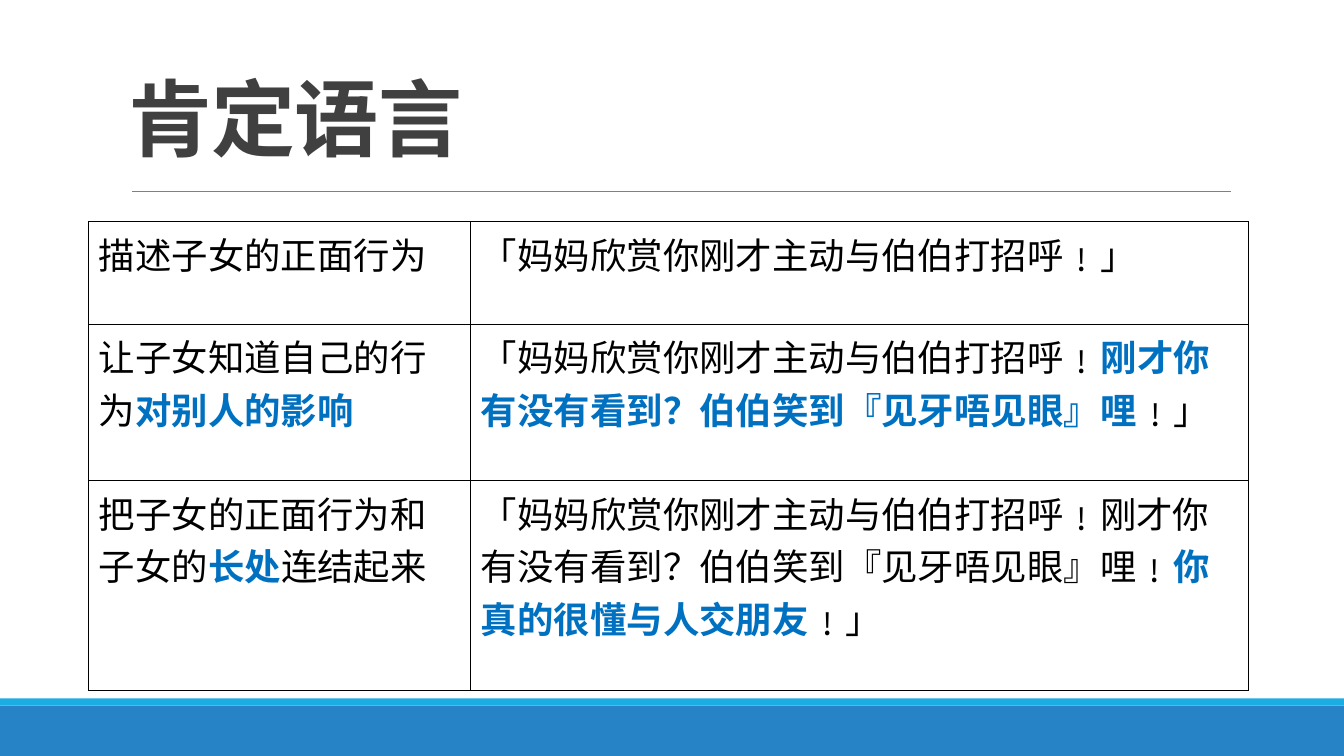
from lxml.etree import SubElement
from pptx import Presentation
from pptx.dml.color import RGBColor
from pptx.enum.shapes import MSO_CONNECTOR, MSO_SHAPE
from pptx.enum.text import MSO_ANCHOR, MSO_AUTO_SIZE, PP_ALIGN
from pptx.oxml.ns import qn
from pptx.util import Inches, Pt

COLORS = {
    "band": "2683C6",
    "stripe": "1CADE4",
    "rule": "808080",
    "title": "404040",
    "text": "000000",
    "emphasis": "0070C0",
    "border": "000000",
}
CJK_FONT = "Noto Sans CJK SC"
GREETING = "「妈妈欣赏你刚才主动与伯伯打招呼﹗"
REACTION = "刚才你有没有看到？伯伯笑到『见牙唔见眼』哩"
CLOSING = "﹗」"

# Each cell holds (words, emphasised) runs.
PRAISE_STEPS = [
    ([("描述子女的正面行为", False)],
     [(GREETING + "」", False)]),
    ([("让子女知道自己的行为", False), ("对别人的影响", True)],
     [(GREETING, False), (REACTION, True), (CLOSING, False)]),
    ([("把子女的正面行为和子女的", False), ("长处", True), ("连结起来", False)],
     [(GREETING + REACTION + "﹗", False), ("你真的很懂与人交朋友", True),
      (CLOSING, False)]),
]
COLUMN_WIDTHS = [3.79, 7.71]
ROW_HEIGHTS = [1.02, 1.55, 2.08]


def color(name):
    return RGBColor.from_string(COLORS[name])


def set_east_asian_font(run):
    SubElement(run.font._element, qn("a:ea"), typeface=CJK_FONT)


def add_bar(slide, left, top, width, height, fill):
    bar = slide.shapes.add_shape(
        MSO_SHAPE.RECTANGLE, Inches(left), Inches(top), Inches(width), Inches(height))
    bar.shadow.inherit = False
    bar.fill.solid()
    bar.fill.fore_color.rgb = color(fill)
    bar.line.fill.background()


def add_footer(slide, left, top, width, height):
    stripe_height = 0.07
    add_bar(slide, left, top + stripe_height, width, height - stripe_height, "band")
    add_bar(slide, left, top, width, stripe_height, "stripe")


def add_heading(slide, left, top, width, height):
    title = slide.shapes.title
    title.left, title.top = Inches(left), Inches(top)
    title.width, title.height = Inches(width), Inches(height)
    frame = title.text_frame
    frame.text = "肯定语言"
    frame.auto_size = MSO_AUTO_SIZE.NONE
    frame.vertical_anchor = MSO_ANCHOR.BOTTOM
    heading = frame.paragraphs[0]
    heading.alignment = PP_ALIGN.LEFT
    heading.line_spacing = 0.85
    heading.font.size = Pt(60)
    heading.font.bold = True
    heading.font.name = CJK_FONT
    heading.font.color.rgb = color("title")
    run = heading.runs[0]
    set_east_asian_font(run)
    run.font._element.set("spc", "-50")

    rule_left, rule_top = left + 0.14, top + height + 0.19
    rule = slide.shapes.add_connector(
        MSO_CONNECTOR.STRAIGHT, Inches(rule_left), Inches(rule_top),
        Inches(rule_left + 10.9), Inches(rule_top))
    rule.line.color.rgb = color("rule")
    rule.line.width = Pt(0.5)
    SubElement(rule._element.spPr, qn("a:effectLst"))


def add_borders(cell):
    properties = cell._tc.get_or_add_tcPr()
    for side in ("lnL", "lnR", "lnT", "lnB"):
        border = SubElement(properties, qn(f"a:{side}"), w=str(Pt(1)))
        fill = SubElement(border, qn("a:solidFill"))
        SubElement(fill, qn("a:srgbClr"), val=COLORS["border"])


def fill_cell(cell, phrases):
    add_borders(cell)
    cell.fill.background()
    paragraph = cell.text_frame.paragraphs[0]
    paragraph.font.size = Pt(26)
    paragraph.font.name = "Arial"
    for words, emphasised in phrases:
        run = paragraph.add_run()
        run.text = words
        run.font.bold = emphasised
        run.font.color.rgb = color("emphasis" if emphasised else "text")
        set_east_asian_font(run)


def add_praise_table(slide, left, top):
    table = slide.shapes.add_table(
        len(ROW_HEIGHTS), len(COLUMN_WIDTHS), Inches(left), Inches(top),
        Inches(sum(COLUMN_WIDTHS)), Inches(sum(ROW_HEIGHTS))).table
    table.first_row = False
    table.horz_banding = False
    for column, width in zip(table.columns, COLUMN_WIDTHS):
        column.width = Inches(width)
    for row, height, step in zip(table.rows, ROW_HEIGHTS, PRAISE_STEPS):
        row.height = Inches(height)
        for cell, phrases in zip(row.cells, step):
            fill_cell(cell, phrases)


def main():
    presentation = Presentation()
    presentation.slide_width = Inches(13.33)
    presentation.slide_height = Inches(7.5)
    slide = presentation.slides.add_slide(presentation.slide_layouts[5])
    add_footer(slide, 0, 6.93, 13.33, 0.57)
    add_heading(slide, 1.17, 0.12, 11, 1.59)
    add_praise_table(slide, 0.88, 2.2)
    presentation.save("out.pptx")


if __name__ == "__main__":
    main()
